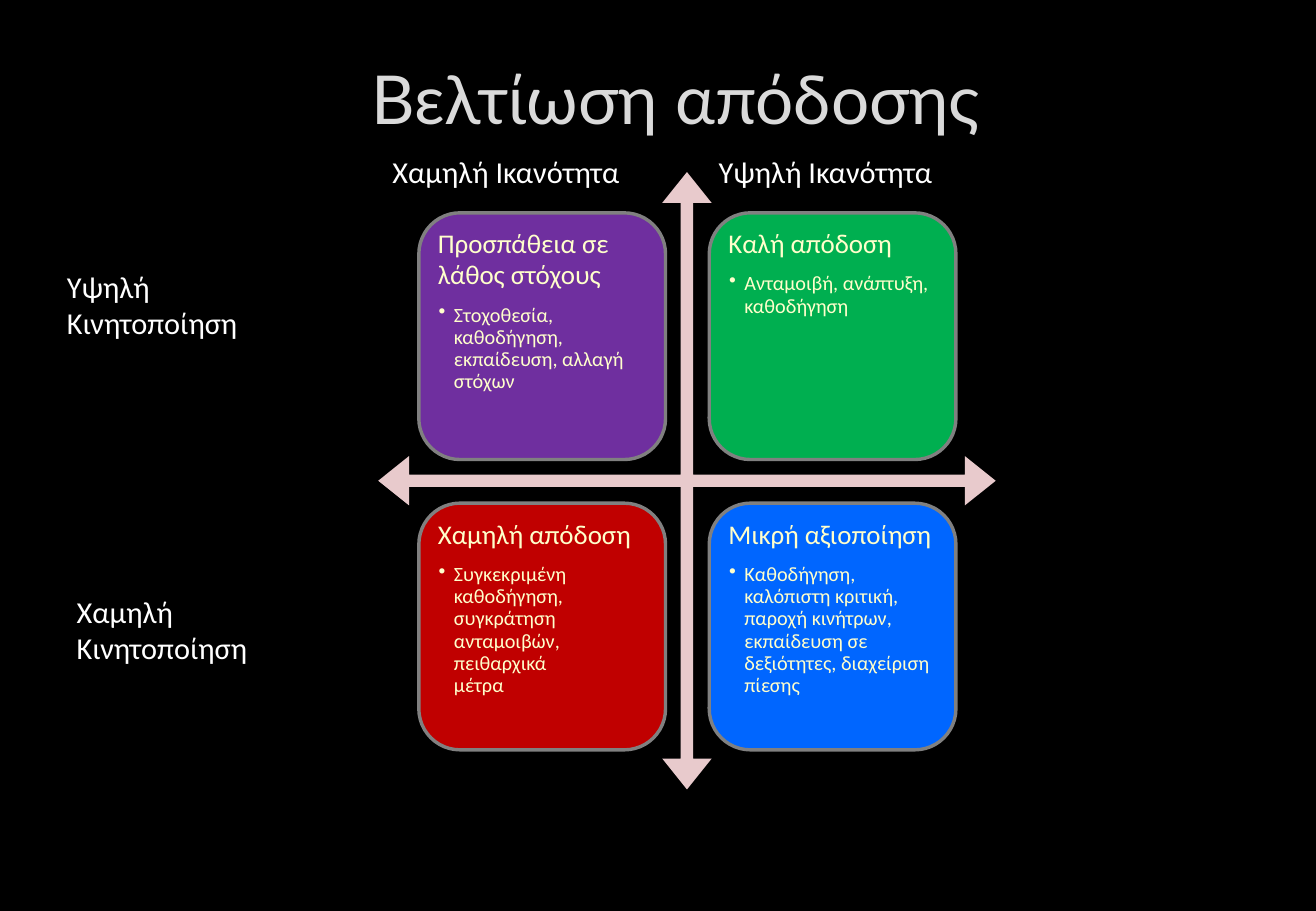
from lxml import etree
from pptx import Presentation
from pptx.dml.color import RGBColor
from pptx.enum.shapes import MSO_SHAPE as Shape
from pptx.enum.text import MSO_ANCHOR as Anchor, PP_ALIGN as Align
from pptx.oxml.ns import qn
from pptx.util import Pt

BLACK = RGBColor(0x00, 0x00, 0x00)
WHITE = RGBColor(0xFF, 0xFF, 0xFF)
SILVER = RGBColor(0xDA, 0xDA, 0xDA)
CREAM = RGBColor(0xFF, 0xFF, 0xCC)
PINK = RGBColor(0xE8, 0xCA, 0xCC)
GRAY = RGBColor(0x80, 0x80, 0x80)
PURPLE = RGBColor(0x6F, 0x2F, 0x9F)
GREEN = RGBColor(0x00, 0xAF, 0x50)
RED = RGBColor(0xC0, 0x00, 0x00)
BLUE = RGBColor(0x00, 0x66, 0xFF)


def write(para, text, size=18, color=WHITE, font="Calibri", leading=None, before=None, bullet=False):
    para.alignment = Align.LEFT
    if leading:
        para.line_spacing = Pt(leading)
    if before:
        para.space_before = Pt(before)
    if bullet:
        properties = para._p.get_or_add_pPr()
        properties.set("marL", str(Pt(9.5)))
        properties.set("indent", str(-Pt(9)))
        etree.SubElement(properties, qn("a:buChar")).set("char", "•")
    para.text = text
    for span in para.runs:
        span.font.name = font
        span.font.size = Pt(size)
        span.font.color.rgb = color


def set_margins(frame, left=0, top=0, right=0):
    frame.word_wrap = True
    frame.margin_left, frame.margin_top = Pt(left), Pt(top)
    frame.margin_right, frame.margin_bottom = Pt(right), 0


deck = Presentation()
deck.slide_width, deck.slide_height = Pt(780), Pt(540)
page = deck.slides.add_slide(deck.slide_layouts[6])
page.background.fill.solid()
page.background.fill.fore_color.rgb = BLACK

title = page.shapes.add_textbox(Pt(220), Pt(33), Pt(500), Pt(50))
set_margins(title.text_frame)
title.text_frame.vertical_anchor = Anchor.MIDDLE
write(title.text_frame.paragraphs[0], "Βελτίωση απόδοσης", size=40, color=SILVER, font="Lato")

axes = page.shapes.add_shape(Shape.QUAD_ARROW, Pt(224.2), Pt(102), Pt(366), Pt(366))
axes.shadow.inherit = False
axes.adjustments[0] = 0.02
axes.adjustments[1] = 0.04
axes.adjustments[2] = 0.05
axes.fill.solid()
axes.fill.fore_color.rgb = PINK
axes.line.fill.background()

LEFT, TOP, SIDE, PITCH = 248.3, 126.2, 146.2, 172.1
quadrants = [
    (PURPLE, "Προσπάθεια σε λάθος στόχους", "Στοχοθεσία, καθοδήγηση, εκπαίδευση, αλλαγή στόχων"),
    (GREEN, "Καλή απόδοση", "Ανταμοιβή, ανάπτυξη, καθοδήγηση"),
    (RED, "Χαμηλή απόδοση",
     "Συγκεκριμένη καθοδήγηση, συγκράτηση ανταμοιβών, πειθαρχικά\vμέτρα"),
    (BLUE, "Μικρή αξιοποίηση",
     "Καθοδήγηση, καλόπιστη κριτική, παροχή κινήτρων, εκπαίδευση σε δεξιότητες, διαχείριση πίεσης"),
]
for index, (color, heading, advice) in enumerate(quadrants):
    row, column = divmod(index, 2)
    box = page.shapes.add_shape(
        Shape.ROUNDED_RECTANGLE,
        Pt(LEFT + column * PITCH), Pt(TOP + row * PITCH), Pt(SIDE), Pt(SIDE))
    box.shadow.inherit = False
    box.fill.solid()
    box.fill.fore_color.rgb = color
    box.line.color.rgb = GRAY
    box.line.width = Pt(2)
    frame = box.text_frame
    set_margins(frame, left=4.2, top=2, right=4)
    frame.vertical_anchor = Anchor.TOP
    write(frame.paragraphs[0], heading, size=16, color=CREAM, leading=18.4)
    write(frame.add_paragraph(), advice, size=12, color=CREAM, leading=13.2, before=8, bullet=True)

labels = [
    ("Χαμηλή Ικανότητα", 232.6, 90.7, 150),
    ("Υψηλή Ικανότητα", 426, 90.7, 150),
    ("Υψηλή Κινητοποίηση", 39.6, 159, 104),
    ("Χαμηλή Κινητοποίηση", 45.4, 351.5, 104),
]
for text, left, top, width in labels:
    label = page.shapes.add_textbox(Pt(left), Pt(top), Pt(width), Pt(24 if width > 104 else 45))
    set_margins(label.text_frame)
    write(label.text_frame.paragraphs[0], text)

deck.save("out.pptx")
